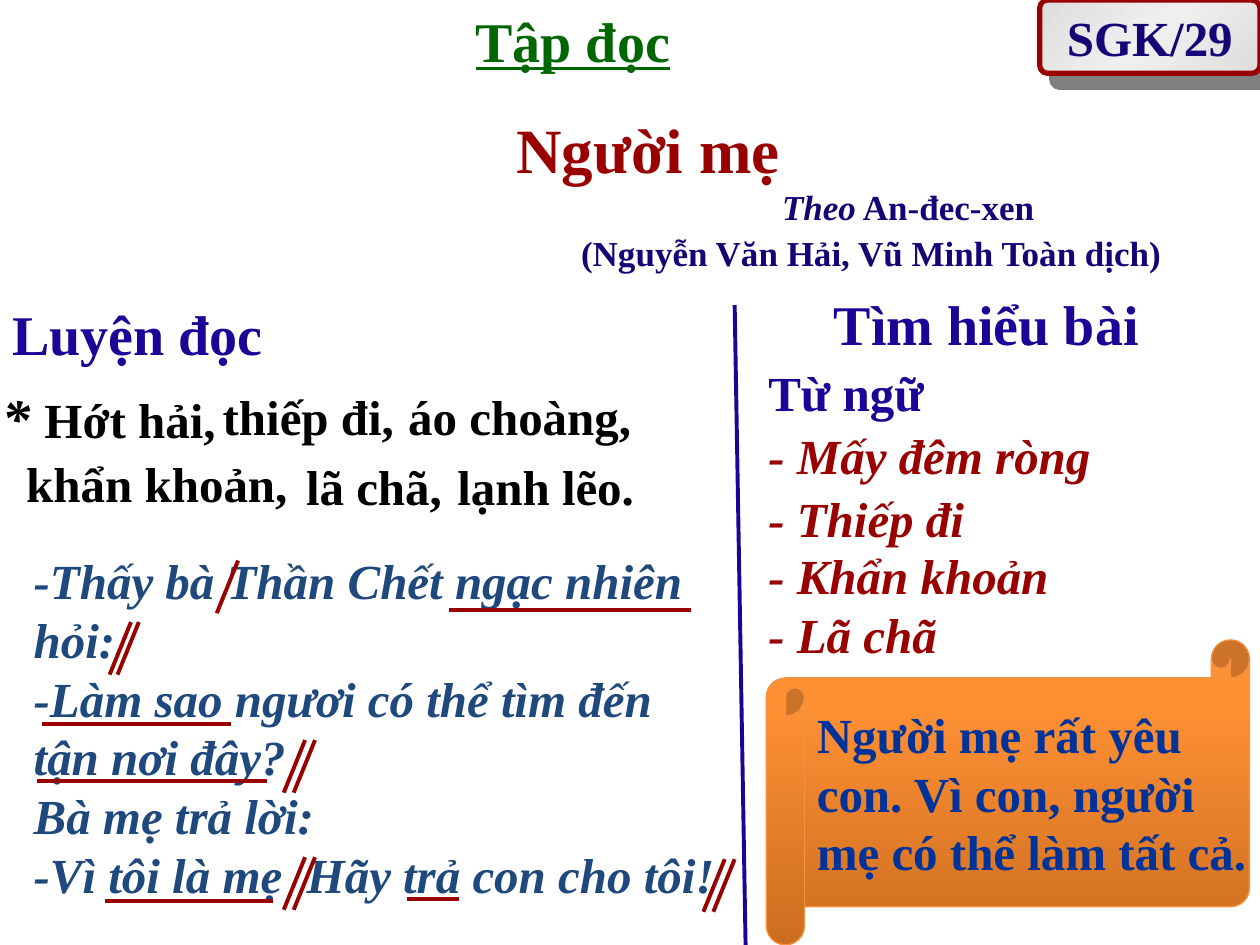
from copy import deepcopy

from lxml import etree
from pptx import Presentation
from pptx.dml.color import RGBColor
from pptx.enum.shapes import MSO_CONNECTOR, MSO_SHAPE
from pptx.enum.text import MSO_ANCHOR, PP_ALIGN
from pptx.oxml.ns import qn
from pptx.util import Cm, Pt

FONT = "Times New Roman"
LEFT, CENTER = PP_ALIGN.LEFT, PP_ALIGN.CENTER
MIDDLE = MSO_ANCHOR.MIDDLE
STRAIGHT = MSO_CONNECTOR.STRAIGHT
SCROLL, ROUNDED = MSO_SHAPE.HORIZONTAL_SCROLL, MSO_SHAPE.ROUNDED_RECTANGLE

BLACK = RGBColor(0x00, 0x00, 0x00)
RED = RGBColor(0x99, 0x00, 0x00)
GREEN = RGBColor(0x00, 0x66, 0x00)
INDIGO = RGBColor(0x1A, 0x05, 0x97)
NAVY = RGBColor(0x14, 0x04, 0x76)
STEEL = RGBColor(0x1F, 0x49, 0x7D)
BLUE = RGBColor(0x00, 0x33, 0x99)
ORANGE_DARK = RGBColor(0xCC, 0x6E, 0x20)
ORANGE = RGBColor(0xFF, 0x90, 0x34)
ORANGE_LIGHT = RGBColor(0xFF, 0x91, 0x36)
ORANGE_EDGE = RGBColor(0xF6, 0x92, 0x40)
GREY = RGBColor(0xDD, 0xDD, 0xDD)
GREY_LIGHT = RGBColor(0xEF, 0xEF, 0xEF)

prs = Presentation()
prs.slide_width, prs.slide_height = Cm(25.4), Cm(19.05)
slide = prs.slides.add_slide(prs.slide_layouts[6])
shapes = slide.shapes


def write(frame, lines, color, size=28, italic=False, align=LEFT, space_before=0):
    """Fill a text frame; space_before is a percentage of the line."""
    frame.text = lines
    for paragraph in frame.paragraphs:
        paragraph.alignment = align
        if space_before:
            before = etree.SubElement(paragraph._p.get_or_add_pPr(), qn("a:spcBef"))
            etree.SubElement(before, qn("a:spcPct"), val=str(space_before * 1000))
        for run in paragraph.runs:
            font = run.font
            font.name, font.size, font.bold, font.italic = FONT, Pt(size), True, italic
            font.color.rgb = color


def paint(shape, stops, angle, edge, edge_width):
    """Give a shape a three-stop gradient and an outline."""
    shape.shadow.inherit = False
    shape.fill.gradient()
    stop_list = shape._element.spPr.find(qn("a:gradFill")).find(qn("a:gsLst"))
    stop_list.append(deepcopy(stop_list[0]))
    for stop, (position, color) in zip(shape.fill.gradient_stops, stops):
        stop.position = position
        stop.color.rgb = color
    shape.fill.gradient_angle = angle
    shape.line.color.rgb = edge
    shape.line.width = Pt(edge_width)


# Titles, headings and word lists: left, top, width, text, colour, size, italic, align
labels = [
    (8.69, 0, 5.72, "Tập đọc", GREEN, 32, False, CENTER),
    (10.16, 2.11, 6.35, "Người mẹ", RED, 36, False, LEFT),
    (14.4, 3.61, 7.82, "Theo An-đec-xen", NAVY, 20, False, CENTER),
    (10.16, 4.55, 14.81, "(Nguyễn Văn Hải, Vũ Minh Toàn dịch)", NAVY, 20, False, CENTER),
    (0, 5.92, 6.15, "Luyện đọc", INDIGO, 32, False, LEFT),
    (16.56, 5.72, 7.37, "Tìm hiểu bài", INDIGO, 32, False, LEFT),
    (15.24, 7.19, 4.88, "Từ ngữ", INDIGO, 28, False, LEFT),
    (-0.2, 7.59, 4.88, "* Hớt hải,", BLACK, 28, False, LEFT),
    (4.24, 7.67, 4.24, "thiếp đi,", BLACK, 28, False, LEFT),
    (7.98, 7.67, 5.23, "áo choàng,", BLACK, 28, False, LEFT),
    (0.28, 9.02, 6.07, "khẩn khoản,", BLACK, 28, False, LEFT),
    (5.92, 9.07, 3.53, "lã chã,", BLACK, 28, False, LEFT),
    (8.97, 9.07, 4.37, "lạnh lẽo.", BLACK, 28, False, LEFT),
    (15.24, 8.46, 7.19, "- Mấy đêm ròng", RED, 28, True, LEFT),
    (15.24, 9.73, 7.19, "- Thiếp đi", RED, 28, True, LEFT),
    (15.24, 10.87, 7.19, "- Khẩn khoản", RED, 28, True, LEFT),
    (15.24, 12.07, 7.19, "- Lã chã", RED, 28, True, LEFT),
]
# Opening words set apart in italics, with their size
italic_openings = {"Theo An-đec-xen": ("Theo", 20), "* Hớt hải,": ("* ", 32)}

for left, top, width, text, color, size, italic, align in labels:
    label = shapes.add_textbox(Cm(left), Cm(top), Cm(width), Cm(size * 0.05))
    label.text_frame.word_wrap = True
    write(label.text_frame, text, color, size, italic, align, space_before=50)
    paragraph = label.text_frame.paragraphs[0]
    if text in italic_openings:
        opening, opening_size = italic_openings[text]
        first = paragraph.runs[0]
        rest = deepcopy(first._r)
        first._r.addnext(rest)
        first.text = opening
        first.font.italic, first.font.size = True, Pt(opening_size)
        paragraph.runs[1].text = text[len(opening):]
    if text == "Tập đọc":
        paragraph.runs[0].font.underline = True

passage = shapes.add_textbox(Cm(0.43), Cm(10.97), Cm(14.6), Cm(7.37))
passage.text_frame.word_wrap = True
passage.text_frame.vertical_anchor = MIDDLE
write(passage.text_frame, "\n".join([
    "-Thấy bà Thần Chết ngạc nhiên",
    "hỏi:",
    "-Làm sao ngươi có thể tìm đến",
    "tận nơi đây?",
    "Bà mẹ trả lời:",
    "-Vì tôi là mẹ  Hãy trả con cho tôi!",
]), STEEL, italic=True)

# Column divider, pause slashes and stress underlines
pauses = [(4.8, 11.3), (2.64, 12.54), (2.8, 12.54), (6.15, 14.92), (6.35, 14.92),
          (6.15, 17.28), (6.35, 17.28), (14.61, 17.32), (14.81, 17.32)]
stresses = [(9.06, 13.92, 12.29), (0.84, 4.65, 14.6), (0.74, 5.38, 15.75),
            (2.11, 5.5, 18.16), (8.2, 9.26, 18.13)]
strokes = [(14.81, 6.15, 15.03, 19.05, INDIGO)]
strokes += [(x, y, x - 0.43, y + 1.06, RED) for x, y in pauses]
strokes += [(start, y, end, y, RED) for start, end, y in stresses]
for x1, y1, x2, y2, color in strokes:
    stroke = shapes.add_connector(STRAIGHT, Cm(x1), Cm(y1), Cm(x2), Cm(y2))
    stroke.line.color.rgb = color
    stroke.line.width = Pt(2.25)
    etree.SubElement(stroke._element.spPr, qn("a:effectLst"))

moral = shapes.add_shape(SCROLL, Cm(15.45), Cm(12.9), Cm(9.74), Cm(6.15))
paint(moral, [(0, ORANGE_DARK), (0.8, ORANGE), (1, ORANGE_LIGHT)], 90, ORANGE_EDGE, 0.75)
moral.text_frame.word_wrap = False
moral.text_frame.vertical_anchor = MIDDLE
write(moral.text_frame,
      "Người mẹ rất yêu\ncon. Vì con, người\nmẹ có thể làm tất cả.", BLUE)

page_badge = shapes.add_shape(ROUNDED, Cm(20.96), Cm(0), Cm(4.44), Cm(1.48))
page_badge.adjustments[0] = 0.11
paint(page_badge, [(0, GREY), (0.5, GREY_LIGHT), (1, GREY)], 315, RED, 3)
page_badge.text_frame.word_wrap = False
page_badge.text_frame.vertical_anchor = MIDDLE
write(page_badge.text_frame, "SGK/29", NAVY, align=CENTER)
effects = page_badge._element.spPr.find(qn("a:effectLst"))
shadow = etree.SubElement(effects, qn("a:outerShdw"), dist=str(Pt(10.6)),
                          dir=str(49 * 60000), algn="ctr", rotWithShape="0")
shadow_color = etree.SubElement(shadow, qn("a:srgbClr"), val=str(BLACK))
etree.SubElement(shadow_color, qn("a:alpha"), val="50000")

prs.save("out.pptx")
